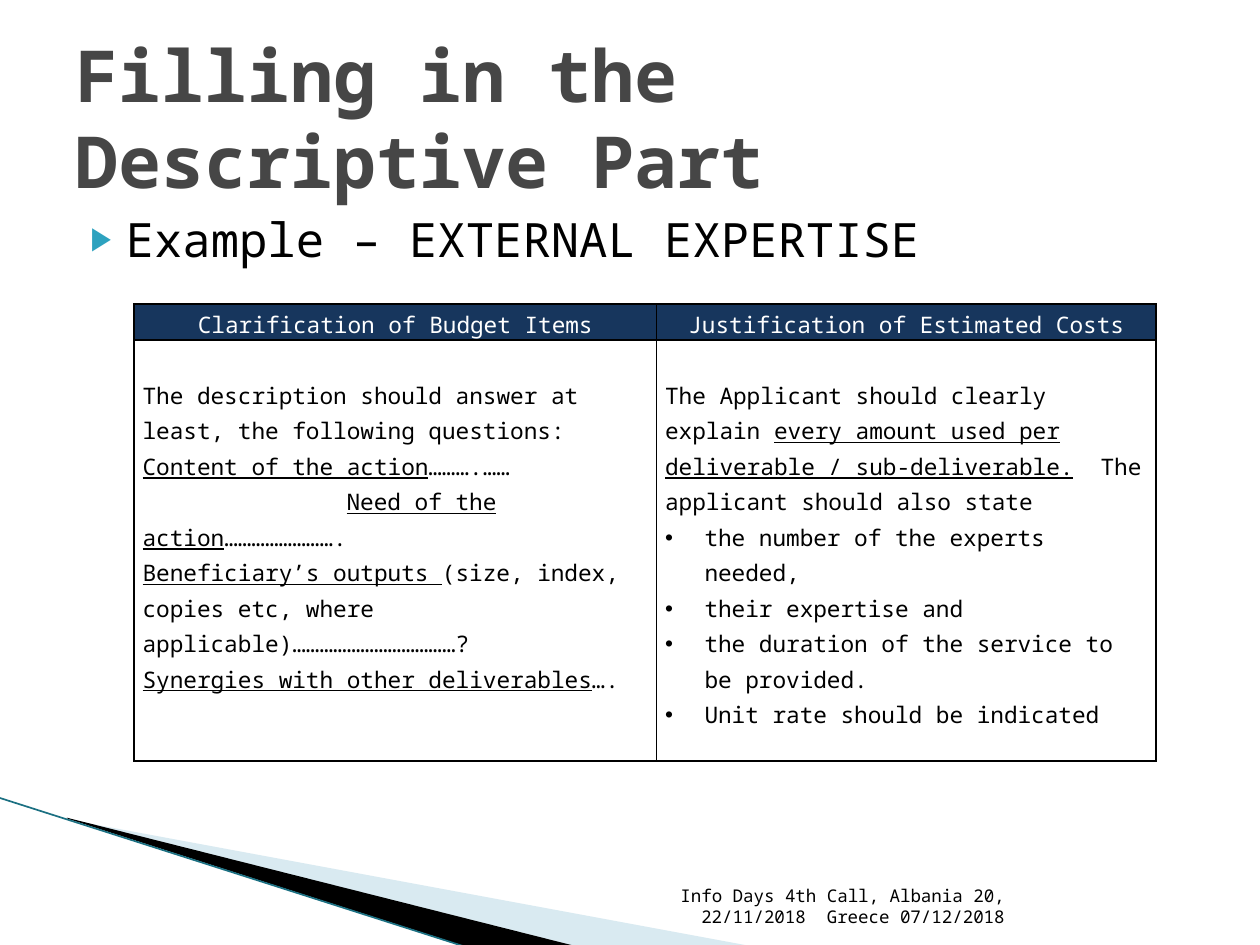
import pptx
import pptx.util
import pptx.dml.color
import pptx.enum.shapes
import pptx.enum.text
import pptx.oxml.ns
import lxml.etree

Pt = pptx.util.Pt
RGB = pptx.dml.color.RGBColor
Align = pptx.enum.text.PP_ALIGN
Anchor = pptx.enum.text.MSO_ANCHOR
qn = pptx.oxml.ns.qn

BLACK = RGB(0x00, 0x00, 0x00)
WHITE = RGB(0xFF, 0xFF, 0xFF)
GREY = RGB(0x46, 0x46, 0x46)
NAVY = RGB(0x17, 0x36, 0x5D)
PALE = RGB(0xA0, 0xCB, 0xDC)
TEAL = RGB(0x1B, 0x70, 0x82)
CYAN = RGB(0x2D, 0xA2, 0xBF)


def apply(item, values):
    for name, value in values.items():
        setattr(item, name, value)


def add(parent, tag, **values):
    return lxml.etree.SubElement(parent, qn(tag), {k: str(v) for k, v in values.items()})


class Deck:
    """Holds the style and the current slide, and draws each kind of element."""

    face = "Noto Sans Mono"

    def __init__(self, show):
        self.slide = show.slides.add_slide(show.slide_layouts[6])
        self.shapes = self.slide.shapes

    def para(self, para, runs, style, form=None, left=0, first=0, mark=None, tint=None, scale=100):
        props = para._p.get_or_add_pPr()
        props.set("marL", str(Pt(left)))
        props.set("indent", str(Pt(first)))
        if mark:
            if tint:
                add(add(props, "a:buClr"), "a:srgbClr", val=tint)
            add(props, "a:buSzPct", val=scale * 1000)
            add(props, "a:buFont", typeface="Arial")
            add(props, "a:buChar", char=mark)
        apply(para, form or {})
        for words, under in runs:
            run = para.add_run()
            run.text = words
            apply(run.font, {"name": self.face, "underline": under, **style["font"]})
            run.font.color.rgb = style["color"]

    def text(self, box, words, style, anchor, form=None, **marks):
        frame = self.shapes.add_textbox(*map(Pt, box)).text_frame
        apply(frame, {"word_wrap": True, "vertical_anchor": anchor})
        self.para(frame.paragraphs[0], [(words, False)], style, form, **marks)

    def shape(self, points, color, alpha=100):
        start, *rest = [(Pt(x), Pt(y)) for x, y in points]
        build = self.shapes.build_freeform(*start)
        build.add_line_segments(rest, close=True)
        shape = build.convert_to_shape()
        shape.shadow.inherit = False
        shape.line.fill.background()
        shape.fill.solid()
        shape.fill.fore_color.rgb = color
        if alpha < 100:
            tone = shape.fill._xPr.find(qn("a:solidFill"))[0]
            add(tone, "a:alpha", val=alpha * 1000)

    def line(self, ends, color, width):
        kind = pptx.enum.shapes.MSO_CONNECTOR.STRAIGHT
        line = self.shapes.add_connector(kind, *map(Pt, ends))
        line.line.color.rgb = color
        line.line.width = Pt(width)
        add(line._element.spPr, "a:effectLst")

    def cell(self, cell, paras, style, form, fill, top, anchor):
        props = cell._tc.get_or_add_tcPr()
        for side in ("a:lnL", "a:lnR", "a:lnT", "a:lnB"):
            edge = add(props, side, w=Pt(1))
            add(add(edge, "a:solidFill"), "a:srgbClr", val=BLACK)
        if fill:
            cell.fill.solid()
            cell.fill.fore_color.rgb = fill
        else:
            cell.fill.background()
        apply(cell, {"margin_left": Pt(5), "margin_right": Pt(5), "margin_top": Pt(top),
                     "margin_bottom": 0, "vertical_anchor": anchor})
        frame = cell.text_frame
        for i, (runs, marks) in enumerate(paras):
            para = frame.add_paragraph() if i else frame.paragraphs[0]
            self.para(para, runs, style, {"line_spacing": 1.15, **form}, **marks)

    def table(self, spot, cols, rows, heads, bodies):
        size = (sum(cols), sum(rows))
        table = self.shapes.add_table(2, len(cols), *map(Pt, spot + size)).table
        apply(table, {"first_row": False, "horz_banding": False})
        for col, width in zip(table.columns, cols):
            col.width = Pt(width)
        for row, height in zip(table.rows, rows):
            row.height = Pt(height)
        font = {"size": Pt(13)}
        for i, (head, body) in enumerate(zip(heads, bodies)):
            self.cell(table.cell(0, i), [([(head, False)], {})], {"font": font, "color": WHITE},
                      {"alignment": Align.CENTER}, NAVY, 0, Anchor.BOTTOM)
            self.cell(table.cell(1, i), body, {"font": font, "color": BLACK},
                      {}, None, 20.3, Anchor.TOP)


def main():
    show = pptx.Presentation()
    apply(show, {"slide_width": Pt(720), "slide_height": Pt(540)})
    deck = Deck(show)

    deck.shape([(39.6, 468.5), (428.4, 540.5), (328.3, 540.5), (39.6, 468)], PALE, 40)
    deck.shape([(38.2, 467.3), (329, 540.7), (267.8, 541.4), (38.9, 468)], BLACK)
    deck.line((-0.7, 455.8, 267.1, 541.4), TEAL, 0.95)

    deck.text((36, 116.6, 648, 356.4), "Example – EXTERNAL EXPERTISE",
              {"font": {"size": Pt(27)}, "color": BLACK}, Anchor.TOP,
              left=28.8, first=-20.2, mark="▶", tint=CYAN, scale=68)
    deck.text((344.9, 504.7, 236.2, 28.8),
              "Info Days 4th Call, Albania 20, 22/11/2018  Greece 07/12/2018",
              {"font": {"size": Pt(10)}, "color": BLACK}, Anchor.BOTTOM,
              {"alignment": Align.RIGHT})
    deck.text((36, 21.6, 648, 90), "Filling in the Descriptive Part",
              {"font": {"size": Pt(41), "bold": True}, "color": GREY}, Anchor.MIDDLE)

    asks = [
        ([("The description should answer at least, the following questions:", False)], {}),
        ([("Content of the action", True), ("……….……", False)], {}),
        ([("Need of the action", True), ("…………………….", False)], {"first": 116.6}),
        ([("Beneficiary’s outputs ", True),
          ("(size, index, copies etc, where applicable)………………………………?", False)], {}),
        ([("Synergies with other deliverables", True), ("….", False)], {}),
    ]
    costs = [([("The Applicant should clearly explain ", False),
               ("every amount used per deliverable / sub-deliverable.", True),
               ("  The applicant should also state", False)], {})]
    points = ("the number of the experts needed,", "their expertise and",
              "the duration of the service to be provided.", "Unit rate should be indicated")
    costs += [([(point, False)], {"left": 22.5, "first": -22.5, "mark": "•"}) for point in points]

    deck.table((76.5, 173.7), (298.6, 285.4), (20.6, 240.6),
               ("Clarification of Budget Items", "Justification of Estimated Costs"),
               (asks, costs))
    show.save("out.pptx")


if __name__ == "__main__":
    main()
